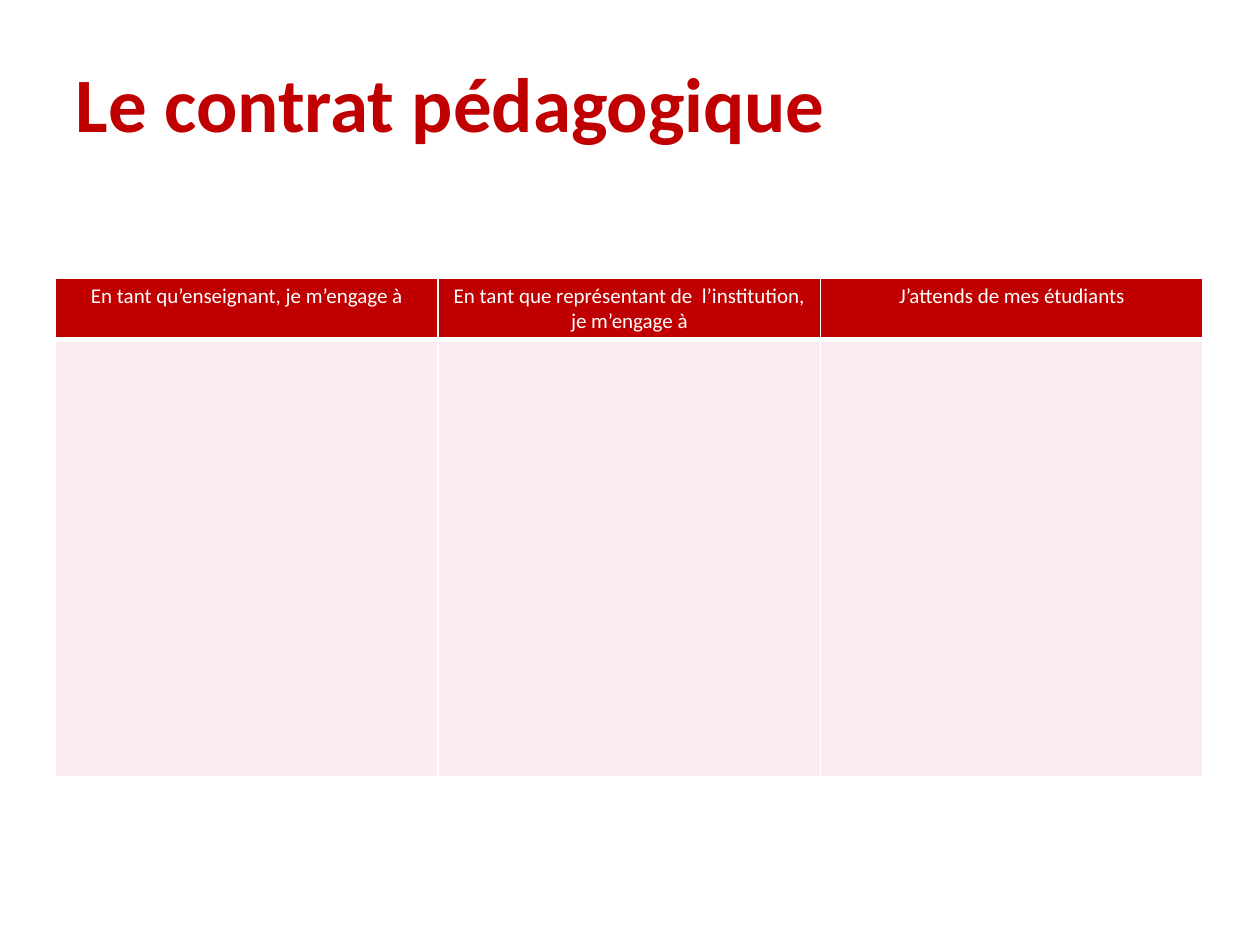
import dataclasses

import lxml.etree
import pptx
import pptx.dml.color
import pptx.enum.text
import pptx.oxml.ns
import pptx.util

Pt = pptx.util.Pt
qn = pptx.oxml.ns.qn


@dataclasses.dataclass(frozen=True)
class Theme:
    font: str = "Calibri"
    red: str = "C00000"
    pink: str = "FCEAF1"
    white: str = "FFFFFF"
    title: int = 44
    head: int = 12
    thin: int = 1
    thick: int = 3


class Deck:
    def __init__(self, theme, width, height):
        self.theme = theme
        self.file = pptx.Presentation()
        self.file.slide_width = Pt(width)
        self.file.slide_height = Pt(height)
        self.slide = self.file.slides.add_slide(self.file.slide_layouts[5])

    def color(self, code):
        return pptx.dml.color.RGBColor.from_string(code)

    def style(self, para, size, code, bold, align):
        para.alignment = align
        for run in para.runs:
            run.font.name = self.theme.font
            run.font.size = Pt(size)
            run.font.bold = bold
            run.font.color.rgb = self.color(code)

    def title(self, text, left, top, width, height):
        shape = self.slide.shapes.title
        shape.left, shape.top = Pt(left), Pt(top)
        shape.width, shape.height = Pt(width), Pt(height)
        frame = shape.text_frame
        frame.text = text
        frame.word_wrap = True
        frame.vertical_anchor = pptx.enum.text.MSO_ANCHOR.MIDDLE
        para = frame.paragraphs[0]
        para.line_spacing = 0.9
        self.style(para, self.theme.title, self.theme.red, True,
                   pptx.enum.text.PP_ALIGN.LEFT)

    def edge(self, cell, side, width):
        props = cell._tc.get_or_add_tcPr()
        line = lxml.etree.SubElement(props, qn(f"a:ln{side}"), w=str(Pt(width)))
        fill = lxml.etree.SubElement(line, qn("a:solidFill"))
        lxml.etree.SubElement(fill, qn("a:srgbClr"), val=self.theme.white)

    def cell(self, cell, text, code, edges):
        for side, width in edges.items():
            self.edge(cell, side, width)
        cell.fill.solid()
        cell.fill.fore_color.rgb = self.color(code)
        cell.margin_left = cell.margin_right = Pt(5.3)
        cell.margin_top = cell.margin_bottom = Pt(2.7)
        if text:
            cell.text_frame.text = text
            self.style(cell.text_frame.paragraphs[0], self.theme.head,
                       self.theme.white, False,
                       pptx.enum.text.PP_ALIGN.CENTER)

    def table(self, heads, left, top, width, rows):
        frame = self.slide.shapes.add_table(
            len(rows), len(heads), Pt(left), Pt(top), Pt(width), Pt(sum(rows)))
        table = frame.table
        for row, height in zip(table.rows, rows):
            row.height = Pt(height)
        for column in table.columns:
            column.width = Pt(width / len(heads))
        thin, thick = self.theme.thin, self.theme.thick
        top_edges = {"L": thin, "R": thin, "T": thin, "B": thick}
        low_edges = {"L": thin, "R": thin, "T": thick, "B": thin}
        for index, text in enumerate(heads):
            self.cell(table.cell(0, index), text, self.theme.red, top_edges)
            self.cell(table.cell(1, index), "", self.theme.pink, low_edges)


def main():
    deck = Deck(Theme(), 720, 540)
    deck.table(
        [
            "En tant qu’enseignant, je m’engage à",
            "En tant que représentant de  l’institution, je m’engage à",
            "J’attends de mes étudiants",
        ],
        31.8, 159.2, 655.8, [34.4, 250.2])
    deck.title("Le contrat pédagogique", 36, 16.5, 648, 90)
    deck.file.save("out.pptx")


if __name__ == "__main__":
    main()
